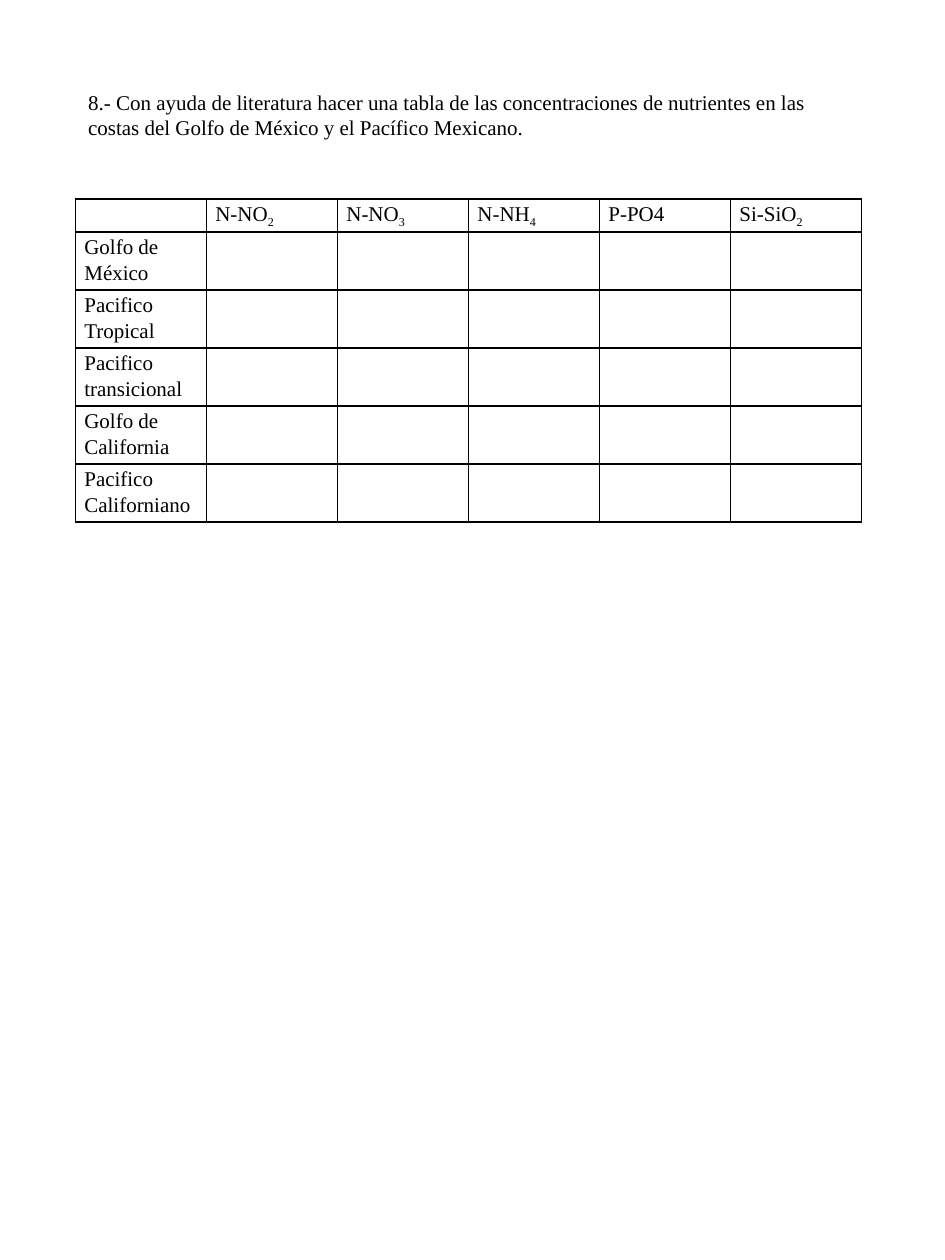
"""Build a one-slide worksheet with a blank table of coastal nutrient levels."""
from lxml import etree
from pptx import Presentation
from pptx import util as u
from pptx.dml.color import RGBColor
from pptx.enum import text
from pptx.oxml import ns

COLORS = {"ink": "000000", "paper": "FFFFFF"}
HEADS = [("", ""), ("N-NO", "2"), ("N-NO", "3"), ("N-NH", "4"), ("P-PO4", ""), ("Si-SiO", "2")]
ZONES = ["Golfo de México", "Pacifico Tropical", "Pacifico transicional",
         "Golfo de California", "Pacifico Californiano"]


class Sheet:
    """Hold the style and the current slide."""

    def __init__(self, deck):
        self.slide = deck.slides.add_slide(deck.slide_layouts[5])
        self.face = "Times New Roman"
        self.size = u.Pt(12)

    def color(self, name):
        return RGBColor.from_string(COLORS[name])

    def style(self, run):
        run.font.name = self.face
        run.font.size = self.size
        run.font.bold = False
        run.font.color.rgb = self.color("ink")

    def title(self, words, left, top, width, height):
        box = self.slide.shapes.title
        box.left, box.top = u.Inches(left), u.Inches(top)
        box.width, box.height = u.Inches(width), u.Inches(height)
        frame = box.text_frame
        frame.text = words
        frame.word_wrap = True
        frame.auto_size = text.MSO_AUTO_SIZE.SHAPE_TO_FIT_TEXT
        frame.vertical_anchor = text.MSO_ANCHOR.TOP
        para = frame.paragraphs[0]
        para.alignment = text.PP_ALIGN.LEFT
        self.style(para.runs[0])

    def border(self, cell):
        props = cell._tc.get_or_add_tcPr()
        for spot, side in enumerate(("lnL", "lnR", "lnT", "lnB")):
            line = etree.Element(ns.qn("a:" + side), w=str(u.Pt(1)))
            fill = etree.SubElement(line, ns.qn("a:solidFill"))
            etree.SubElement(fill, ns.qn("a:srgbClr"), val=COLORS["ink"])
            props.insert(spot, line)

    def cell(self, cell, words, sub=""):
        cell.margin_left = cell.margin_right = u.Inches(0.07)
        cell.margin_top = cell.margin_bottom = 0
        cell.fill.solid()
        cell.fill.fore_color.rgb = self.color("paper")
        self.border(cell)
        para = cell.text_frame.paragraphs[0]
        para.line_spacing = 1.15
        for part, base in ((words, 0), (sub, -25000)):
            if part:
                run = para.add_run()
                run.text = part
                self.style(run)
                if base:
                    run.font._element.set("baseline", str(base))
        etree.SubElement(para._p, ns.qn("a:endParaRPr"), sz=str(int(self.size.pt * 100)))

    def table(self, rows, left, top, wide, head, tall):
        count = len(rows[0])
        size = [u.Inches(n) for n in (left, top, wide * count, head + tall * (len(rows) - 1))]
        grid = self.slide.shapes.add_table(len(rows), count, *size).table
        grid.first_row = grid.horz_banding = False
        for col in grid.columns:
            col.width = u.Inches(wide)
        for i, row in enumerate(rows):
            grid.rows[i].height = u.Inches(tall if i else head)
            for j, item in enumerate(row):
                self.cell(grid.cell(i, j), *item)


def main():
    deck = Presentation()
    deck.slide_width, deck.slide_height = u.Inches(7.5), u.Inches(10)
    sheet = Sheet(deck)
    sheet.title("8.- Con ayuda de literatura hacer una tabla de las concentraciones de "
                "nutrientes en las costas del Golfo de México y el Pacífico Mexicano.",
                0.6, 0.66, 6.23, 0.5)
    blank = [("", "")] * (len(HEADS) - 1)
    rows = [HEADS] + [[(zone, "")] + blank for zone in ZONES]
    sheet.table(rows, 0.6, 1.58, 1.04, 0.24, 0.43)
    deck.save("out.pptx")


if __name__ == "__main__":
    main()
